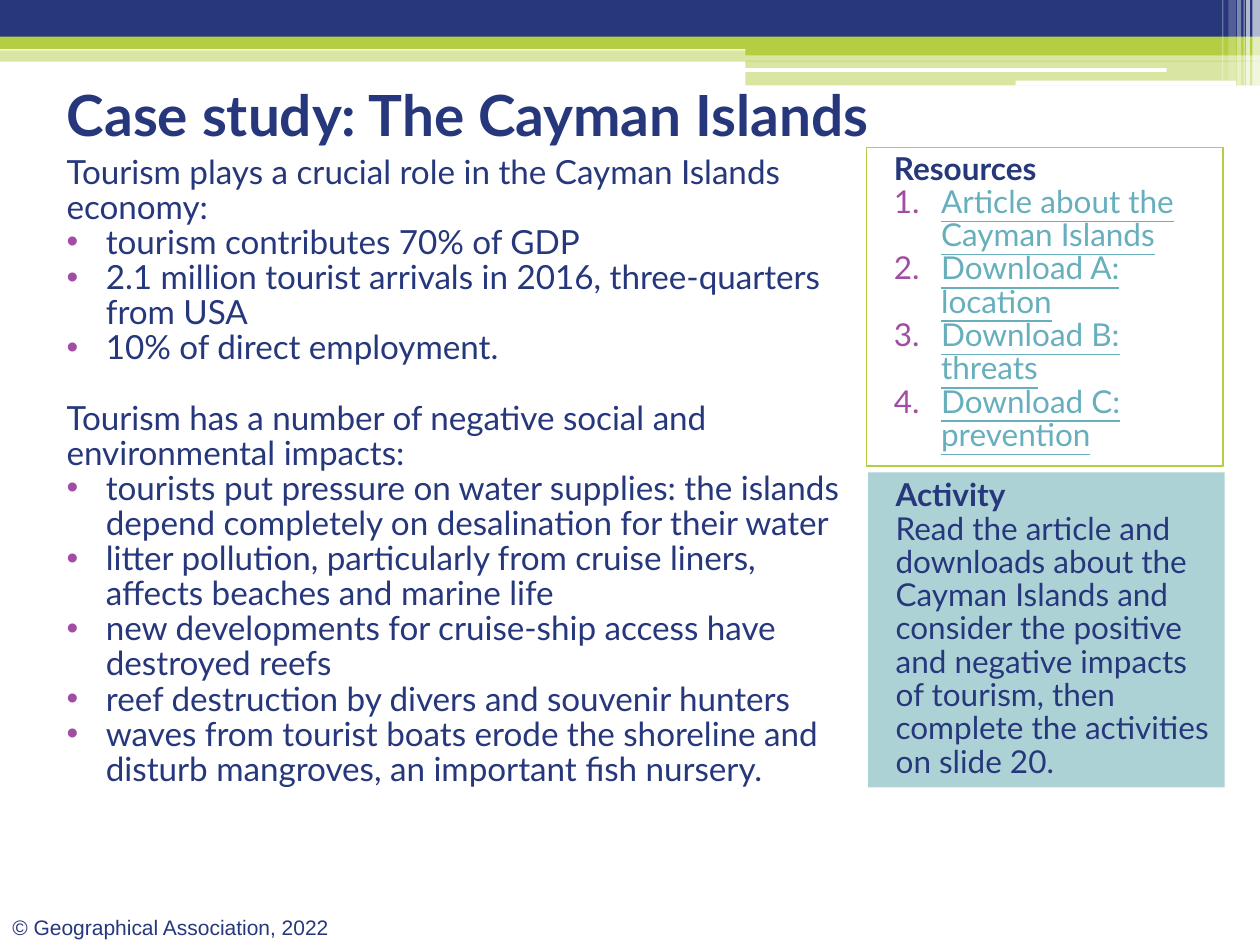
from lxml import etree
from pptx import Presentation
from pptx.dml.color import RGBColor
from pptx.enum import shapes, text
from pptx.oxml import ns
from pptx.util import Pt

NAVY, LIME, WHITE = "26377C", "B4CE44", "FFFFFF"
TEAL, LINK, PURPLE = "ADD2D6", "67AFBD", "A04DA3"
LINE_SPACING = 0.88
BODY_SIZE, PANEL_SIZE = 19, 18

# Content
TITLE = "Case study: The Cayman Islands"
COPYRIGHT = "© Geographical Association, 2022"
SECTIONS = [
    ("Tourism plays a crucial role in the Cayman Islands economy:", [
        "tourism contributes 70% of GDP",
        "2.1 million tourist arrivals in 2016, three-quarters from USA",
        "10% of direct employment.",
    ]),
    ("Tourism has a number of negative social and environmental impacts:", [
        "tourists put pressure on water supplies: the islands depend "
        "completely on desalination for their water",
        "litter pollution, particularly from cruise liners, affects beaches "
        "and marine life",
        "new developments for cruise-ship access have destroyed reefs",
        "reef destruction by divers and souvenir hunters",
        "waves from tourist boats erode the shoreline and disturb mangroves, "
        "an important fish nursery.",
    ]),
]
RESOURCES = [
    "Article about the Cayman Islands",
    "Download A: location",
    "Download B: threats",
    "Download C: prevention",
]
ACTIVITY = ("Read the article and downloads about the Cayman Islands and "
            "consider the positive and negative impacts of tourism, then "
            "complete the activities on slide 20.")

# Header bands: left, top, width, height, colour, opacity %
BANDS = [
    (0, 28.8, 720, 6.5, LIME, 50),
    (0, 0, 720, 24.5, NAVY, 100),
    (0, 20.9, 720, 7.2, LIME, 100),
    (426, 24.5, 294, 7.2, LIME, 100),
    (426, 34.6, 294, 14.2, LIME, 50),
]
SLOTS = [(425.5, 38.9, 241.2, 2.2), (580.3, 46.1, 126, 2.9)]
# Stripes at the right edge: left, width, height, opacity %
STRIPES = [
    (715.7, 4.3, 49, 65),
    (712.1, 2.2, 49, 65),
    (710.6, 0.7, 49, 60),
    (707, 2.2, 49, 40),
    (702, 4.3, 46.1, 20),
    (698.4, 0.7, 46.1, 30),
]


def colour(hex_code):
    return RGBColor.from_string(hex_code)


def add_block(left, top, width, height, fill=None, opacity=100, line=None,
              rounded=False):
    kind = shapes.MSO_SHAPE.ROUNDED_RECTANGLE if rounded else shapes.MSO_SHAPE.RECTANGLE
    block = slide.shapes.add_shape(kind, Pt(left), Pt(top), Pt(width), Pt(height))
    block.shadow.inherit = False
    if fill:
        block.fill.solid()
        block.fill.fore_color.rgb = colour(fill)
    else:
        block.fill.background()
    if opacity < 100:
        tint = block.fill._xPr.find(".//" + ns.qn("a:srgbClr"))
        etree.SubElement(tint, ns.qn("a:alpha"), val=str(opacity * 1000))
    if line:
        block.line.color.rgb = colour(line)
        block.line.width = Pt(0.75)
    else:
        block.line.fill.background()
    return block


def write(frame, words, size=PANEL_SIZE, color=NAVY, font="Lato", bold=False,
          underline=False, indent=0, hang=0, marker=None, before=0,
          spacing=LINE_SPACING):
    """Add a paragraph; marker is a bullet character or "1." for numbering."""
    paragraph = frame.paragraphs[0]
    if paragraph.runs:
        paragraph = frame.add_paragraph()
    props = paragraph._p.get_or_add_pPr()
    props.set("marL", str(Pt(indent)))
    props.set("indent", str(Pt(-hang)))
    if marker:
        marker_colour = etree.SubElement(props, ns.qn("a:buClr"))
        etree.SubElement(marker_colour, ns.qn("a:srgbClr"), val=PURPLE)
        if marker == "1.":
            etree.SubElement(props, ns.qn("a:buAutoNum"), type="arabicPeriod")
        else:
            etree.SubElement(props, ns.qn("a:buFont"), typeface="Arial")
            etree.SubElement(props, ns.qn("a:buChar"), char=marker)
    paragraph.alignment = text.PP_ALIGN.LEFT
    paragraph.line_spacing = spacing
    paragraph.space_before = Pt(before)
    run = paragraph.add_run()
    run.text = words
    run.font.name = font
    run.font.size = Pt(size)
    run.font.bold = bold
    run.font.underline = underline
    run.font.color.rgb = colour(color)


def set_frame(holder, anchor=text.MSO_ANCHOR.TOP):
    frame = holder.text_frame
    frame.word_wrap = True
    frame.auto_size = text.MSO_AUTO_SIZE.NONE
    frame.vertical_anchor = anchor
    return frame


def add_textbox(left, top, width, height):
    return set_frame(slide.shapes.add_textbox(Pt(left), Pt(top), Pt(width), Pt(height)))


deck = Presentation()
deck.slide_width, deck.slide_height = Pt(720), Pt(540)
slide = deck.slides.add_slide(deck.slide_layouts[5])

# Header decoration
for *box, fill, opacity in BANDS:
    add_block(*box, fill=fill, opacity=opacity)
for box in SLOTS:
    add_block(*box, fill=WHITE, rounded=True)
for left, width, height, opacity in STRIPES:
    add_block(left, 0, width, height, fill=WHITE, opacity=opacity)

# Copyright line
write(add_textbox(0, 519.1, 206.6, 21.6), COPYRIGHT, size=12, font="Arial", spacing=1)

# Title
title = slide.shapes.title
title.left, title.top, title.width, title.height = Pt(31), Pt(45.4), Pt(648), Pt(38.9)
write(set_frame(title, text.MSO_ANCHOR.MIDDLE), TITLE, size=32.4, bold=True, spacing=1)

# Activity panel
activity = set_frame(add_block(496.1, 270, 203.8, 180, fill=TEAL), text.MSO_ANCHOR.MIDDLE)
write(activity, "Activity", bold=True, indent=8.64)
write(activity, ACTIVITY, indent=8.64)

# Resources panel
resources = set_frame(add_block(495.1, 84.2, 203.8, 182.2, line=LIME))
write(resources, "Resources", bold=True, indent=8.64)
for resource in RESOURCES:
    write(resources, resource, color=LINK, underline=True, indent=35.64, hang=27,
          marker="1.")

# Main text, with one line's height between sections
body = add_textbox(22.3, 85.7, 470.9, 393.8)
section_gap = round(BODY_SIZE * 1.2 * LINE_SPACING, 1)
for number, (lead, points) in enumerate(SECTIONS):
    write(body, lead, size=BODY_SIZE, indent=8.64, before=section_gap if number else 0)
    for point in points:
        write(body, point, size=BODY_SIZE, indent=31.14, hang=22.5, marker="•")

deck.save("out.pptx")
